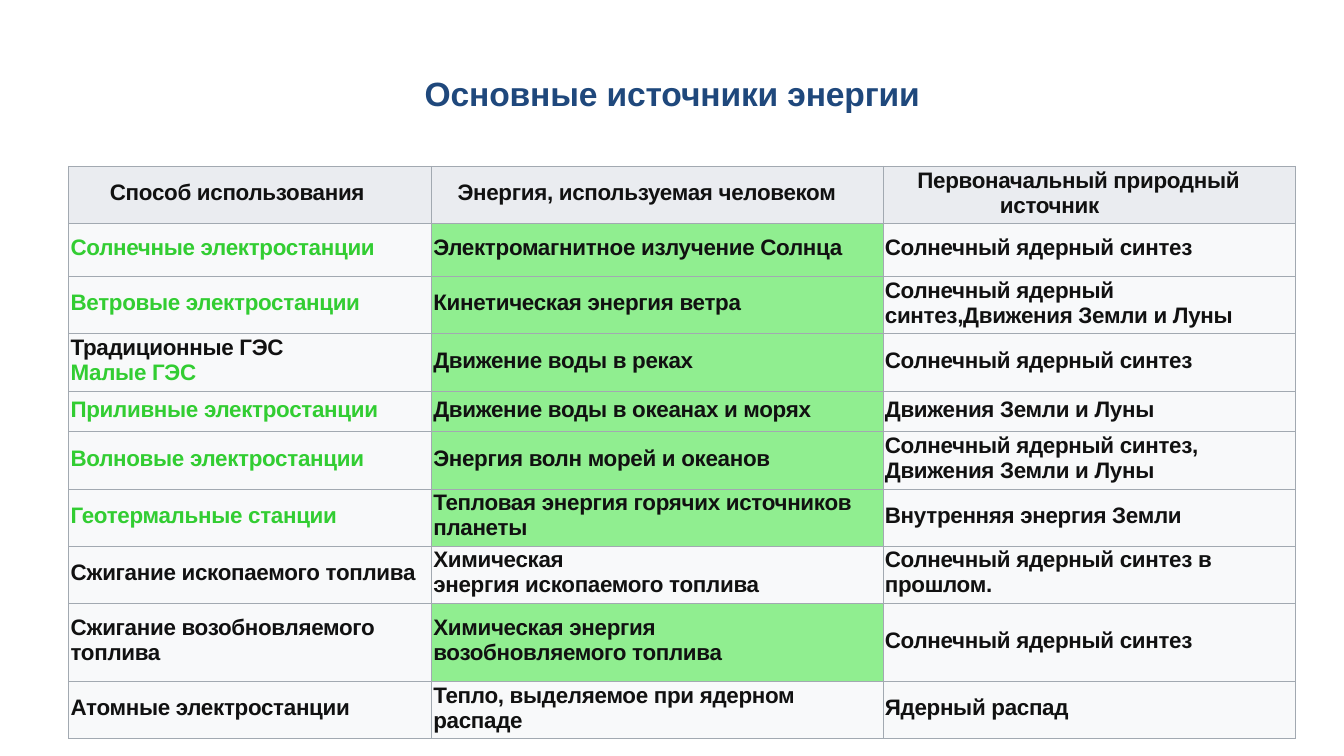
"""Builds a slide with a table of the main energy sources."""
import lxml.etree
import pptx
import pptx.dml.color
import pptx.enum.text
import pptx.oxml.ns
import pptx.util

Cm = pptx.util.Cm
Pt = pptx.util.Pt
RGBColor = pptx.dml.color.RGBColor
qn = pptx.oxml.ns.qn

NAVY = RGBColor(0x1F, 0x48, 0x7C)
INK = RGBColor(0x11, 0x11, 0x11)
LIME = RGBColor(0x32, 0xCD, 0x32)
LIGHT_GREEN = RGBColor(0x90, 0xEE, 0x90)
HEADER_GREY = RGBColor(0xEA, 0xEC, 0xF0)
PALE = RGBColor(0xF8, 0xF9, 0xFA)
BORDER = RGBColor(0xA2, 0xA9, 0xB1)

COLUMN_WIDTHS = [9.14, 11.38, 10.4]
HEADERS = ["Способ использования", "Энергия, используемая человеком",
           "Первоначальный природный источник"]
HEADER_INDENTS = [(1.04, 0), (0.66, 0), (2.95, -2.08)]
BODY_INDENT = (0.05, 0)
TWO_LINE_ROW = 1.44

SOURCES = [
    (1.34, "Солнечные электростанции", "Электромагнитное излучение Солнца",
     "Солнечный ядерный синтез"),
    (TWO_LINE_ROW, "Ветровые электростанции", "Кинетическая энергия ветра",
     "Солнечный ядерный\nсинтез,Движения Земли и Луны"),
    (TWO_LINE_ROW, "Традиционные ГЭС\nМалые ГЭС", "Движение воды в реках",
     "Солнечный ядерный синтез"),
    (1.03, "Приливные электростанции", "Движение воды в океанах и морях",
     "Движения Земли и Луны"),
    (TWO_LINE_ROW, "Волновые электростанции", "Энергия волн морей и океанов",
     "Солнечный ядерный синтез, Движения Земли и Луны"),
    (TWO_LINE_ROW, "Геотермальные станции",
     "Тепловая энергия горячих источников планеты", "Внутренняя энергия Земли"),
    (TWO_LINE_ROW, "Сжигание ископаемого топлива",
     "Химическая\nэнергия ископаемого топлива",
     "Солнечный ядерный синтез в прошлом."),
    (1.97, "Сжигание возобновляемого топлива",
     "Химическая энергия\nвозобновляемого топлива", "Солнечный ядерный синтез"),
    (TWO_LINE_ROW, "Атомные электростанции",
     "Тепло, выделяемое при ядерном распаде", "Ядерный распад"),
]
GREEN_WAYS = {"Солнечные электростанции", "Ветровые электростанции", "Малые ГЭС",
              "Приливные электростанции", "Волновые электростанции",
              "Геотермальные станции"}
NON_RENEWABLE = {"Сжигание ископаемого топлива", "Атомные электростанции"}


class EnergySlide:
    """Holds the text style and the slide, and adds its elements."""

    font_name = "Arial"
    cell_size = Pt(16)

    def __init__(self, presentation):
        self.slide = presentation.slides.add_slide(presentation.slide_layouts[5])

    def style(self, paragraph, size, color, spacing):
        font = paragraph.font
        font.name, font.size, font.bold = self.font_name, size, True
        font.color.rgb = color
        for run in paragraph.runs:
            run.font.language_id = None
            run.font._element.set("spc", str(spacing))

    def title(self, text):
        heading = self.slide.shapes.title
        heading.left, heading.top = Cm(1.7), Cm(0.76)
        heading.width, heading.height = Cm(30.48), Cm(3.18)
        frame = heading.text_frame
        frame.text = text
        frame.vertical_anchor = pptx.enum.text.MSO_ANCHOR.MIDDLE
        frame.paragraphs[0].alignment = pptx.enum.text.PP_ALIGN.CENTER
        self.style(frame.paragraphs[0], Pt(24), NAVY, -10)

    def borders(self, cell):
        properties = cell._tc.get_or_add_tcPr()
        for position, side in enumerate(("lnL", "lnR", "lnT", "lnB")):
            line = lxml.etree.Element(qn(f"a:{side}"), w=str(Pt(0.5)))
            fill = lxml.etree.SubElement(line, qn("a:solidFill"))
            lxml.etree.SubElement(fill, qn("a:srgbClr"), val=str(BORDER))
            properties.insert(position, line)

    def cell(self, cell, text, fill, indents):
        cell.margin_left = cell.margin_right = cell.margin_top = 0
        cell.margin_bottom = Cm(0.1)
        cell.vertical_anchor = pptx.enum.text.MSO_ANCHOR.MIDDLE
        cell.fill.solid()
        cell.fill.fore_color.rgb = fill
        self.borders(cell)
        cell.text_frame.text = text
        left, first_line = indents
        for paragraph in cell.text_frame.paragraphs:
            color = LIME if paragraph.text in GREEN_WAYS else INK
            self.style(paragraph, self.cell_size, color, -20)
            properties = paragraph._p.get_or_add_pPr()
            properties.set("marL", str(Cm(left)))
            properties.set("indent", str(Cm(first_line)))

    def table(self):
        heights = [TWO_LINE_ROW] + [source[0] for source in SOURCES]
        table = self.slide.shapes.add_table(
            len(heights), len(COLUMN_WIDTHS), Cm(1.73), Cm(4.19),
            Cm(sum(COLUMN_WIDTHS)), Cm(sum(heights))).table
        table.horz_banding = False
        for column, width in zip(table.columns, COLUMN_WIDTHS):
            column.width = Cm(width)
        for row, height in zip(table.rows, heights):
            row.height = Cm(height)
        for column, header in enumerate(HEADERS):
            self.cell(table.cell(0, column), header, HEADER_GREY,
                      HEADER_INDENTS[column])
        for row, (_, *texts) in enumerate(SOURCES, start=1):
            energy_fill = PALE if texts[0] in NON_RENEWABLE else LIGHT_GREEN
            for column, fill in enumerate((PALE, energy_fill, PALE)):
                self.cell(table.cell(row, column), texts[column], fill, BODY_INDENT)


def main():
    presentation = pptx.Presentation()
    presentation.slide_width, presentation.slide_height = Cm(33.87), Cm(19.05)
    energy = EnergySlide(presentation)
    energy.title("Основные источники энергии")
    energy.table()
    presentation.save("out.pptx")


if __name__ == "__main__":
    main()
